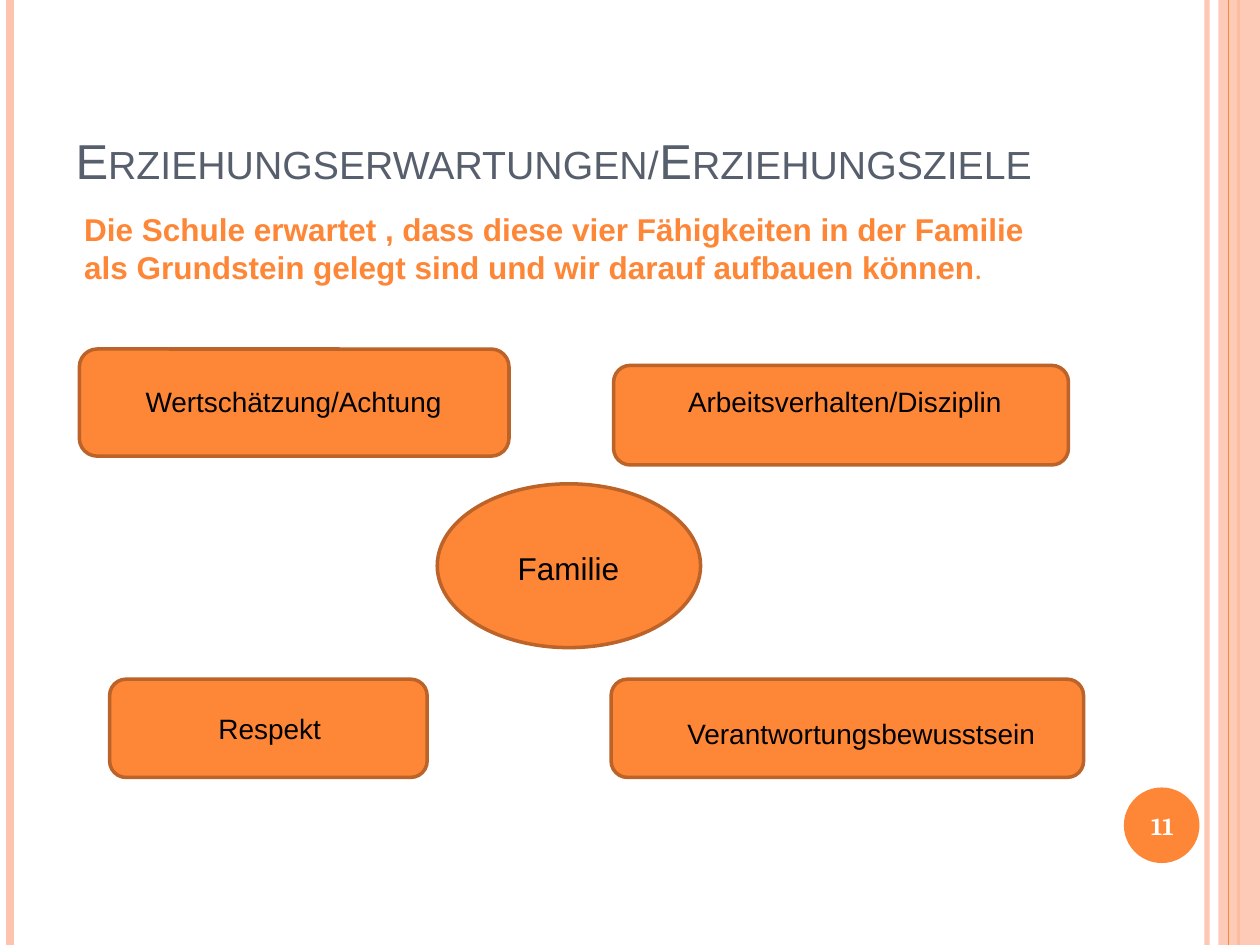
"""Build the slide on what the school expects families to teach."""
from lxml.etree import SubElement
from pptx import Presentation
from pptx.dml.color import RGBColor
from pptx.enum.shapes import MSO_CONNECTOR, MSO_SHAPE
from pptx.enum.text import MSO_ANCHOR, MSO_AUTO_SIZE, PP_ALIGN
from pptx.oxml.ns import qn
from pptx.util import Inches, Pt

ORANGE = RGBColor(0xFE, 0x86, 0x37)
BROWN = RGBColor(0xBC, 0x63, 0x29)
PEACH = RGBColor(0xFE, 0xC3, 0xAE)
SLATE = RGBColor(0x57, 0x5F, 0x6D)
BLACK = RGBColor(0, 0, 0)
WHITE = RGBColor(0xFF, 0xFF, 0xFF)


def add_filled(kind, box, fill, outline=None):
    shape = slide.shapes.add_shape(kind, *map(Inches, box))
    shape.shadow.inherit = False
    shape.fill.solid()
    shape.fill.fore_color.rgb = fill
    if outline is None:
        shape.line.fill.background()
    else:
        shape.line.color.rgb = outline
        shape.line.width = Pt(2)
    return shape


def add_run(paragraph, text, size, color, bold=False, font="Arial"):
    run = paragraph.add_run()
    run.text = text
    run.font.name = font
    run.font.size = Pt(size)
    run.font.bold = bold
    run.font.color.rgb = color
    return run


prs = Presentation()
prs.slide_width = Inches(10)
prs.slide_height = Inches(7.5)
slide = prs.slides.add_slide(prs.slide_layouts[1])
heading, appreciation = slide.placeholders

stripes = [
    (9.58, PEACH, 3, 93),
    (0.08, PEACH, 4.5, 100),
    (9.83, ORANGE, 1.5, 100),
    (9.75, ORANGE, 0.75, 100),
]
for x, color, width, opacity in stripes:
    if x == 9.75:
        band = add_filled(MSO_SHAPE.RECTANGLE, (9.67, 0, 0.33, 7.5), PEACH)
        band_color = band._element.spPr.find(qn("a:solidFill"))[0]
        SubElement(band_color, qn("a:alpha"), val="87000")
    stripe = slide.shapes.add_connector(
        MSO_CONNECTOR.STRAIGHT, Inches(x), Inches(0), Inches(x), Inches(7.5))
    stripe.line.color.rgb = color
    stripe.line.width = Pt(width)
    if opacity < 100:
        stripe_color = stripe.line._ln.find(qn("a:solidFill"))[0]
        SubElement(stripe_color, qn("a:alpha"), val=str(opacity * 1000))
    SubElement(stripe._element.spPr, qn("a:effectLst"))

add_filled(MSO_SHAPE.OVAL, (8.92, 6.25, 0.6, 0.6), ORANGE)
add_filled(MSO_SHAPE.OVAL, (3.47, 3.84, 2.09, 1.3), ORANGE, BROWN)
skill_boxes = [
    (4.85, 5.39, 3.75, 0.78),
    (0.87, 5.39, 2.52, 0.78),
    (4.87, 2.9, 3.61, 0.79),
    (0.63, 2.77, 3.41, 0.85),
]
for box in skill_boxes:
    add_filled(MSO_SHAPE.ROUNDED_RECTANGLE, box, ORANGE, BROWN)

for holder, box in ((heading, (0.5, 0.3, 8.17, 1.25)),
                    (appreciation, (0.65, 3, 3.36, 0.63))):
    holder.left, holder.top, holder.width, holder.height = map(Inches, box)
    holder.text_frame.auto_size = MSO_AUTO_SIZE.NONE
    slide.shapes._spTree.append(holder._element)

heading.text_frame.vertical_anchor = MSO_ANCHOR.BOTTOM
heading_line = heading.text_frame.paragraphs[0]
heading_line.alignment = PP_ALIGN.LEFT
heading_run = add_run(heading_line, "Erziehungserwartungen/Erziehungsziele", 28, SLATE)
heading_run._r.get_or_add_rPr().set("cap", "small")

appreciation_line = appreciation.text_frame.paragraphs[0]
appreciation_line.alignment = PP_ALIGN.CENTER
appreciation_line.space_before = Pt(6)
bullet_props = appreciation_line._p.get_or_add_pPr()
bullet_props.set("marL", "0")
bullet_props.set("indent", "0")
SubElement(bullet_props, qn("a:buNone"))
add_run(appreciation_line, "Wertschätzung/Achtung", 16, BLACK)

labels = [
    ("Arbeitsverhalten/Disziplin", (4.9, 3, 3.61, 0.62), 16, PP_ALIGN.CENTER),
    ("Respekt", (0.84, 5.6, 2.6, 0.5), 16, PP_ALIGN.CENTER),
    ("Verantwortungsbewusstsein", (4.89, 5.64, 3.89, 0.5), 16, PP_ALIGN.CENTER),
    ("Familie", (4.01, 4.31, 1.16, 0.55), 18, PP_ALIGN.LEFT),
]
for text, box, size, alignment in labels:
    label = slide.shapes.add_textbox(*map(Inches, box)).text_frame
    label.word_wrap = True
    label.paragraphs[0].alignment = alignment
    label.paragraphs[0].space_before = Pt(6)
    add_run(label.paragraphs[0], text, size, BLACK)

expectation = slide.shapes.add_textbox(
    Inches(0.57), Inches(1.62), Inches(7.9), Inches(0.71)).text_frame
expectation.word_wrap = True
expectation.auto_size = MSO_AUTO_SIZE.SHAPE_TO_FIT_TEXT
expectation_line = expectation.paragraphs[0]
add_run(expectation_line,
        "Die Schule erwartet , dass diese vier Fähigkeiten in der Familie "
        "als Grundstein gelegt sind und wir darauf aufbauen können",
        18, ORANGE, bold=True)
add_run(expectation_line, ".", 18, ORANGE, font="Cambria")

page_number = slide.shapes.add_textbox(
    Inches(8.89), Inches(6.27), Inches(0.67), Inches(0.57)).text_frame
page_number.word_wrap = True
page_number.vertical_anchor = MSO_ANCHOR.MIDDLE
page_number.paragraphs[0].alignment = PP_ALIGN.CENTER
add_run(page_number.paragraphs[0], "11", 14, WHITE, bold=True, font="Cambria")

prs.save("out.pptx")
